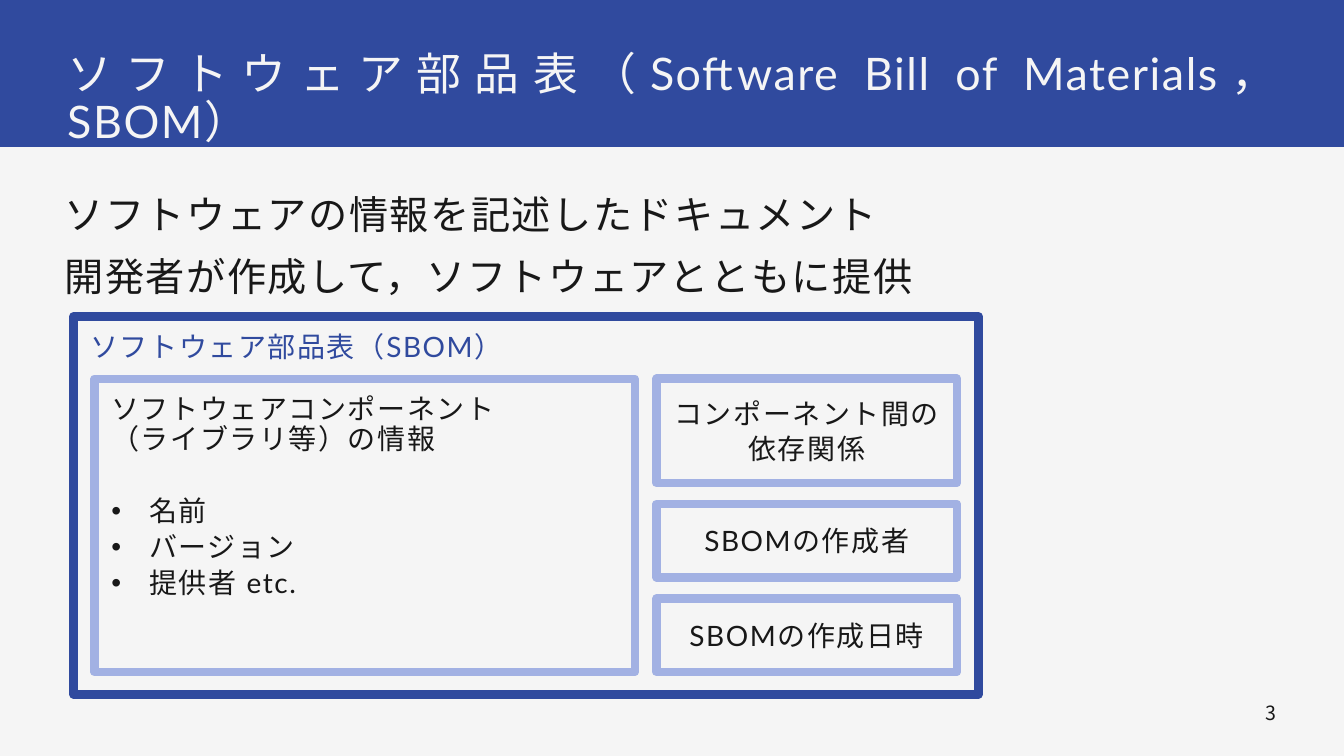
from lxml import etree
from pptx import Presentation
from pptx.dml.color import RGBColor
from pptx.enum import shapes, text
from pptx.oxml import ns
from pptx.util import Pt

NAVY = RGBColor(0x30, 0x4A, 0x9E)
PALE_BLUE = RGBColor(0xA2, 0xB1, 0xE3)
PAPER = RGBColor(0xF5, 0xF5, 0xF5)
INK = RGBColor(0x18, 0x18, 0x18)
LEFT, CENTER, RIGHT, JUSTIFY = (text.PP_ALIGN.LEFT, text.PP_ALIGN.CENTER,
                                text.PP_ALIGN.RIGHT, text.PP_ALIGN.JUSTIFY)
TOP, MIDDLE = text.MSO_ANCHOR.TOP, text.MSO_ANCHOR.MIDDLE


def write(sp, lines, size, color, insets, anchor=TOP, align=LEFT, before=3, after=1):
    """Fill a shape with one paragraph per line."""
    tf = sp.text_frame
    sides = ("margin_left", "margin_top", "margin_right", "margin_bottom")
    frame = dict(zip(sides, map(Pt, insets)), word_wrap=True,
                 auto_size=text.MSO_AUTO_SIZE.NONE, vertical_anchor=anchor)
    for name, value in frame.items():
        setattr(tf, name, value)
    tf.text = "\n".join(lines)
    for p in tf.paragraphs:
        layout = dict(alignment=align, line_spacing=0.9,
                      space_before=Pt(before), space_after=Pt(after))
        for name, value in layout.items():
            setattr(p, name, value)
        for r in p.runs:
            r.font.size, r.font.name, r.font.color.rgb = Pt(size), "Lato", color
            rpr = r.font._element
            rpr.set("lang", "ja-JP")
            rpr.set("spc", "110")
            rpr.find(ns.qn("a:latin")).addnext(
                etree.Element(ns.qn("a:ea"), typeface="Lato"))
    return tf


def add_box(x, y, w, h, color):
    """Add an unfilled frame with a thick, round-cornered outline."""
    sp = s.shapes.add_shape(shapes.MSO_SHAPE.RECTANGLE, Pt(x), Pt(y), Pt(w), Pt(h))
    sp.shadow.inherit = False
    sp.fill.background()
    sp.line.color.rgb, sp.line.width = color, Pt(6)
    etree.SubElement(sp.line._ln, ns.qn("a:round"))
    return sp


prs = Presentation()
prs.slide_width, prs.slide_height = Pt(960), Pt(540)
s = prs.slides.add_slide(prs.slide_layouts[5])
s.background.fill.solid()
s.background.fill.fore_color.rgb = PAPER

# Header band, behind the title
band = s.shapes.add_shape(shapes.MSO_SHAPE.RECTANGLE, Pt(-2), Pt(-1.5), Pt(964), Pt(106.5))
band.shadow.inherit = False
band.fill.solid()
band.fill.fore_color.rgb = NAVY
band.line.fill.background()
s.shapes._spTree.insert(2, band._element)

# Title
title = s.shapes.title
title.left, title.top, title.width, title.height = Pt(42), Pt(31), Pt(877), Pt(42.5)
write(title, ["ソフトウェア部品表（Software Bill of Materials，SBOM）"],
      32, PAPER, (6, 6, 6, 4), align=JUSTIFY, before=16, after=0)

# Lead text
lead = s.shapes.add_textbox(Pt(42), Pt(136), Pt(877), Pt(373))
write(lead, ["ソフトウェアの情報を記述したドキュメント",
             "開発者が作成して，ソフトウェアとともに提供"],
      28, INK, (4, 4, 4, 4), before=14, after=0)

# SBOM frame
frame = add_box(52.5, 226, 646.5, 270, NAVY)
write(frame, ["ソフトウェア部品表（SBOM）"], 20, NAVY, (12, 12, 6, 6))

# Component details with bullets
component = add_box(67.5, 270.5, 386, 209.5, PALE_BLUE)
tf = write(component, ["ソフトウェアコンポーネント\v（ライブラリ等）の情報",
                       "名前", "バージョン", "提供者 etc."],
           20, INK, (12, 12, 6, 6))
bullets = tf.paragraphs[1:]
bullets[0].space_before = Pt(28.6)
for p in bullets:
    ppr = p._p.get_or_add_pPr()
    ppr.set("marL", str(Pt(27)))
    ppr.set("indent", str(Pt(-27)))
    etree.SubElement(ppr, ns.qn("a:buFont"), typeface="Arial")
    etree.SubElement(ppr, ns.qn("a:buChar"), char="•")

# Other contents, stacked with equal gaps
y = 270.5
for lines, height in ((["コンポーネント間の", "依存関係"], 74.5),
                      (["SBOMの作成者"], 52.5),
                      (["SBOMの作成日時"], 52.5)):
    item = add_box(469, y, 214.5, height, PALE_BLUE)
    write(item, lines, 20, INK, (6, 9, 6, 6), MIDDLE, CENTER)
    y += height + 15

# Slide number field, counted from page 3
prs.element.set("firstSlideNum", "3")
number = s.shapes.add_textbox(Pt(798), Pt(497), Pt(121), Pt(23))
p = number.text_frame.paragraphs[0]
p.alignment = RIGHT
r = p.add_run()
r.text = "3"
r.font.size, r.font.name, r.font.color.rgb = Pt(14), "Noto Sans CJK JP", INK
field = etree.SubElement(p._p, ns.qn("a:fld"), type="slidenum",
                         id="{B6F15528-21DE-4FAA-801E-634DDDAF4B2B}")
field.extend(list(r._r))
p._p.remove(r._r)

prs.save("out.pptx")
